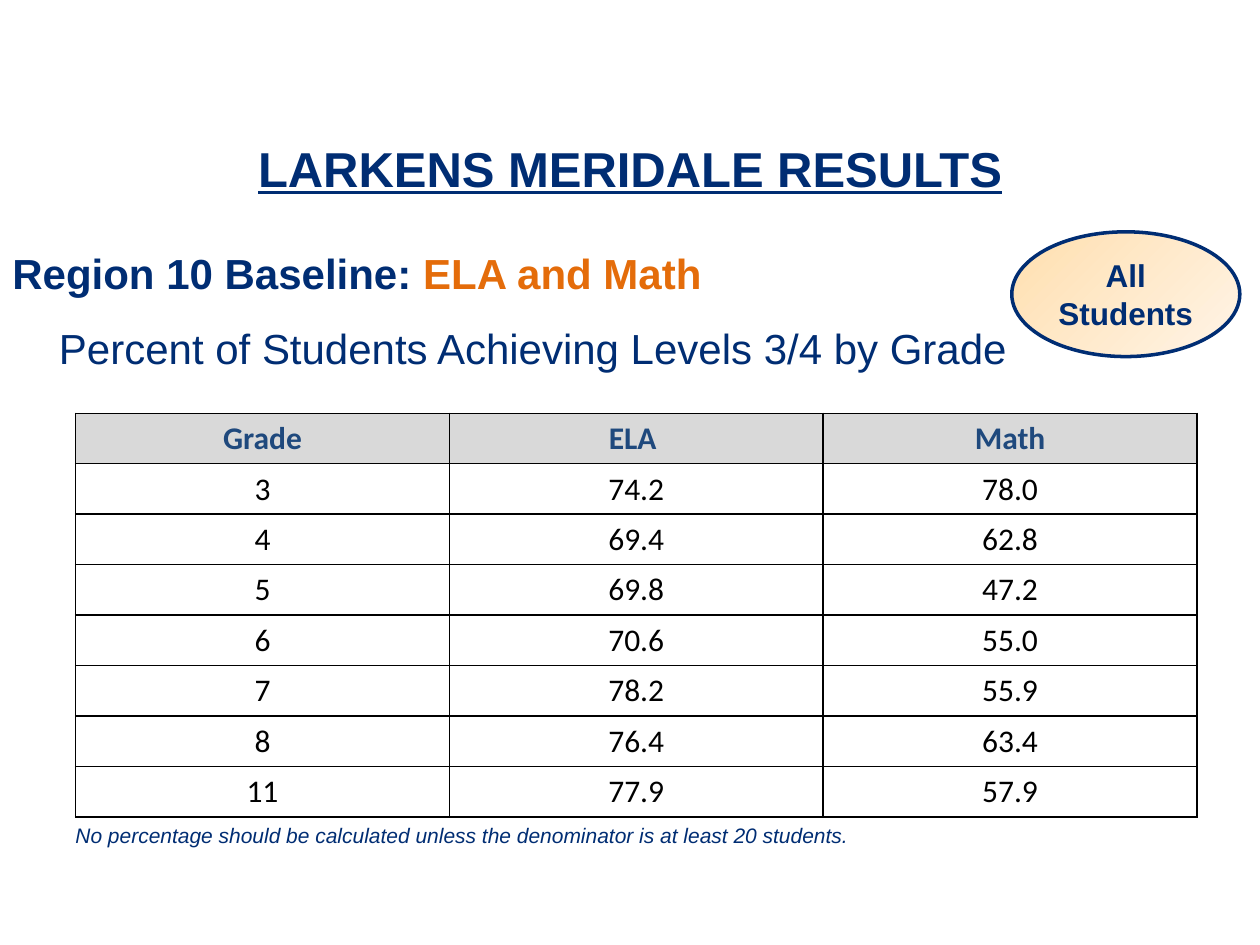
from dataclasses import dataclass

from lxml import etree
from pptx import Presentation
from pptx.dml.color import RGBColor
from pptx.enum import shapes, text
from pptx.oxml import ns
from pptx.util import Inches, Pt


@dataclass(frozen=True)
class Theme:
    navy: str = "002D73"
    orange: str = "E46C0A"
    heading: str = "1F497D"
    black: str = "000000"
    white: str = "FFFFFF"
    grey: str = "D9D9D9"
    glow: tuple = ("FFDFAF", "FFF4E7")
    sans: str = "Arial"
    table: str = "Calibri"
    title: int = 28
    subtitle: int = 24
    body: int = 18
    note: int = 12


theme = Theme()
deck = Presentation()
deck.slide_width, deck.slide_height = Inches(10), Inches(7.5)
page = deck.slides.add_slide(deck.slide_layouts[6])


def area(left, top, width, height):
    across, down = deck.slide_width / 100, deck.slide_height / 100
    return [int(n) for n in (left * across, top * down, width * across, height * down)]


def write(para, words, size, color=theme.navy, **formats):
    span = para.add_run()
    span.text = words
    span.font.color.rgb = RGBColor.from_string(color)
    for name, value in {"name": theme.sans, "size": Pt(size), **formats}.items():
        setattr(span.font, name, value)


header = page.shapes.add_textbox(*area(0, 14, 100, 26.4)).text_frame
header.word_wrap = True
title = header.paragraphs[0]
title.alignment = text.PP_ALIGN.CENTER
title.space_after = Pt(14)
write(title, "LARKENS MERIDALE RESULTS", theme.title, bold=True, underline=True)

region = header.add_paragraph()
write(region, "Region 10 Baseline: ", theme.subtitle, bold=True)
write(region, "ELA and Math", theme.subtitle, theme.orange, bold=True)
measure = header.add_paragraph()
measure._p.get_or_add_pPr().set("marL", str(Inches(0.37)))
write(measure, "Percent of Students Achieving Levels 3/4 by Grade", theme.subtitle)
for para in (region, measure):
    para.line_spacing = 1.5

results = [
    ("Grade", "ELA ", "Math"),
    ("3", "74.2", "78.0"),
    ("4", "69.4", "62.8"),
    ("5", "69.8", "47.2"),
    ("6", "70.6", "55.0"),
    ("7", "78.2", "55.9"),
    ("8", "76.4", "63.4"),
    ("11", "77.9", "57.9"),
]
grid = page.shapes.add_table(len(results), 3, *area(6, 43.73, 89, 42.67)).table
for row, values in enumerate(results):
    top_row = row == 0
    for column, value in enumerate(values):
        cell = grid.cell(row, column)
        borders = cell._tc.get_or_add_tcPr()
        for side in ("lnL", "lnR", "lnT", "lnB"):
            line = etree.SubElement(borders, ns.qn(f"a:{side}"), w=str(Pt(1)))
            paint = etree.SubElement(line, ns.qn("a:solidFill"))
            etree.SubElement(paint, ns.qn("a:srgbClr"), val=theme.black)
        cell.fill.solid()
        cell.fill.fore_color.rgb = RGBColor.from_string(theme.grey if top_row else theme.white)
        para = cell.text_frame.paragraphs[0]
        para.alignment = text.PP_ALIGN.CENTER
        ink = theme.heading if top_row else theme.black
        write(para, value, theme.body, ink, name=theme.table, bold=top_row)

badge = page.shapes.add_shape(shapes.MSO_SHAPE.OVAL, *area(80.3, 24.53, 18.1, 13.2))
badge.shadow.inherit = False
badge.fill.gradient()
badge.fill.gradient_angle = 315
for stop, color in zip(badge.fill.gradient_stops, theme.glow):
    stop.color.rgb = RGBColor.from_string(color)
badge.line.color.rgb = RGBColor.from_string(theme.navy)
badge.line.width = Pt(2)
badge.text_frame.word_wrap = True
badge.text_frame.vertical_anchor = text.MSO_ANCHOR.MIDDLE
label = badge.text_frame.paragraphs[0]
label.alignment = text.PP_ALIGN.CENTER
write(label, "All Students", theme.body, bold=True)

footnote = page.shapes.add_textbox(*area(5, 86.4, 87.9, 4)).text_frame
footnote.word_wrap = True
write(
    footnote.paragraphs[0],
    "No percentage should be calculated unless the denominator is at least 20 students.",
    theme.note,
    italic=True,
)

deck.save("out.pptx")
